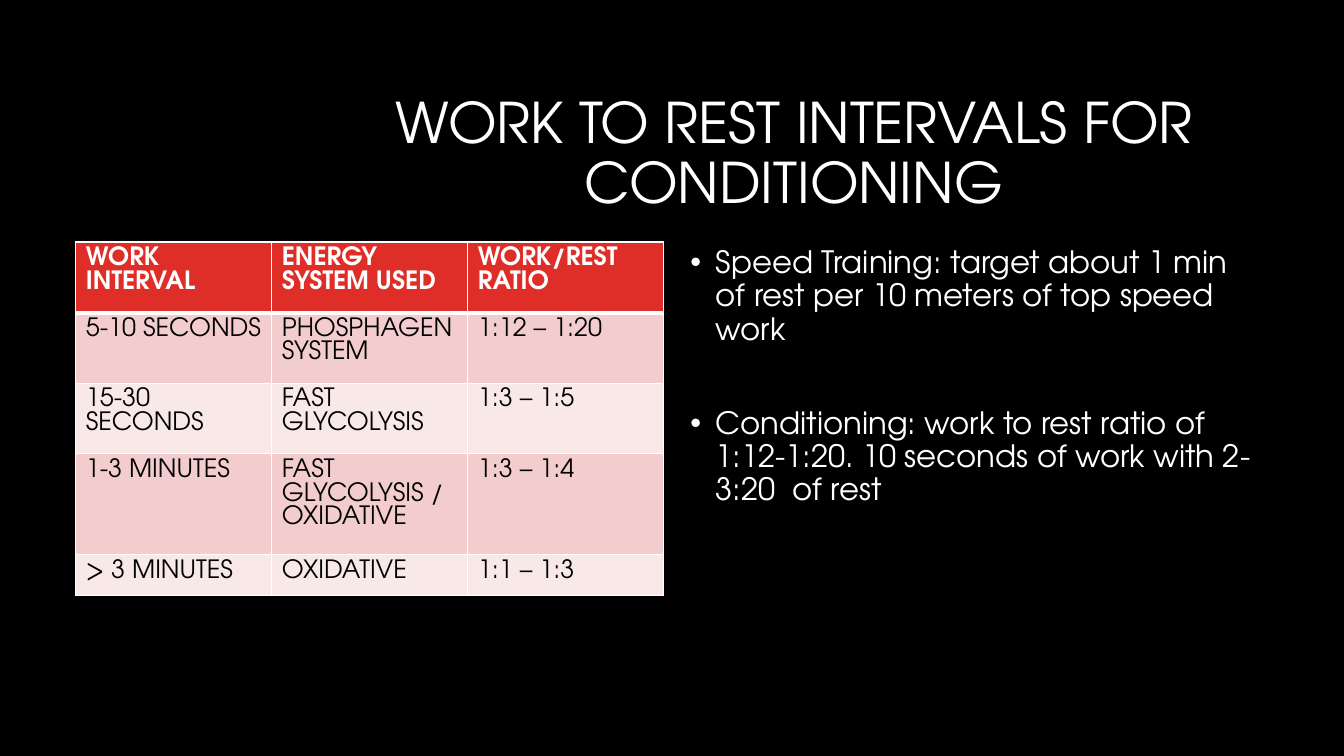
from dataclasses import dataclass

from lxml.etree import SubElement
from pptx import Presentation
from pptx.dml.color import RGBColor
from pptx.enum.text import MSO_ANCHOR, PP_ALIGN
from pptx.oxml.ns import qn
from pptx.util import Cm, Pt


@dataclass(frozen=True)
class Theme:
    font: str = "TeX Gyre Adventor"
    back: str = "000000"
    light: str = "FFFFFF"
    dark: str = "000000"
    head: str = "DF2E28"
    bands: tuple = ("F3CDCD", "F9E8E8")
    title: int = 40
    body: int = 22
    cell: int = 18


THEME = Theme()

ROWS = [
    ("WORK INTERVAL", "ENERGY SYSTEM USED", "WORK/REST RATIO"),
    ("5-10 SECONDS", "PHOSPHAGEN SYSTEM", "1:12 – 1:20"),
    ("15-30 SECONDS", "FAST GLYCOLYSIS", "1:3 – 1:5"),
    ("1-3 MINUTES", "FAST GLYCOLYSIS / OXIDATIVE", "1:3 – 1:4"),
    ("> 3 MINUTES", "OXIDATIVE", "1:1 – 1:3"),
]

POINTS = [
    "Speed Training: target about 1 min of rest per 10 meters of top speed work",
    "Conditioning: work to rest ratio of 1:12-1:20. 10 seconds of work with 2-3:20  of rest",
]


def write(para, text, size, color=THEME.light, bold=False,
          align=PP_ALIGN.LEFT, lead=0.9, gap=0, mark=None):
    if mark:
        props = para._p.get_or_add_pPr()
        props.set("marL", str(Cm(0.64)))
        props.set("indent", str(-Cm(0.64)))
        SubElement(props, qn("a:buFont"), typeface="Arial")
        SubElement(props, qn("a:buChar"), char=mark)
    para.alignment = align
    para.line_spacing = lead
    para.space_before = Pt(gap)
    run = para.add_run()
    run.text = text
    font = run.font
    font.name, font.size, font.bold = THEME.font, Pt(size), bold
    font.color.rgb = RGBColor.from_string(color)


def add_box(slide, left, top, width, height, anchor=MSO_ANCHOR.TOP):
    box = slide.shapes.add_textbox(Cm(left), Cm(top), Cm(width), Cm(height))
    frame = box.text_frame
    frame.word_wrap = True
    frame.vertical_anchor = anchor
    return frame


def add_title(slide, text):
    frame = add_box(slide, 8.05, 2.13, 23.93, 3.58, MSO_ANCHOR.MIDDLE)
    write(frame.paragraphs[0], text, THEME.title, align=PP_ALIGN.CENTER)


def add_list(slide, items):
    frame = add_box(slide, 17.15, 6.1, 14.81, 11.18)
    for i, text in enumerate(items):
        para = frame.add_paragraph() if i else frame.paragraphs[0]
        write(para, text, THEME.body, gap=43.5 if i else 0, mark="•")


def paint(cell, color, base):
    props = cell._tc.get_or_add_tcPr()
    for side, width in (("L", 1), ("R", 1), ("T", 1), ("B", base)):
        line = SubElement(props, qn(f"a:ln{side}"), w=str(Pt(width)))
        fill = SubElement(line, qn("a:solidFill"))
        SubElement(fill, qn("a:srgbClr"), val=THEME.light)
    cell.fill.solid()
    cell.fill.fore_color.rgb = RGBColor.from_string(color)


def add_grid(slide, rows):
    high, wide = len(rows), len(rows[0])
    table = slide.shapes.add_table(high, wide, Cm(1.91), Cm(6.1),
                                   Cm(14.82), Cm(1.03 * high)).table
    for r, row in enumerate(rows):
        head = r == 0
        color = THEME.head if head else THEME.bands[(r - 1) % 2]
        ink = THEME.light if head else THEME.dark
        for c, text in enumerate(row):
            cell = table.cell(r, c)
            paint(cell, color, 3 if head else 1)
            write(cell.text_frame.paragraphs[0], text, THEME.cell,
                  color=ink, bold=head, lead=1.0)


def main():
    deck = Presentation()
    deck.slide_width, deck.slide_height = Cm(33.87), Cm(19.05)
    slide = deck.slides.add_slide(deck.slide_layouts[6])
    slide.background.fill.solid()
    slide.background.fill.fore_color.rgb = RGBColor.from_string(THEME.back)
    add_title(slide, "WORK TO REST INTERVALS FOR CONDITIONING")
    add_grid(slide, ROWS)
    add_list(slide, POINTS)
    deck.save("out.pptx")


if __name__ == "__main__":
    main()
